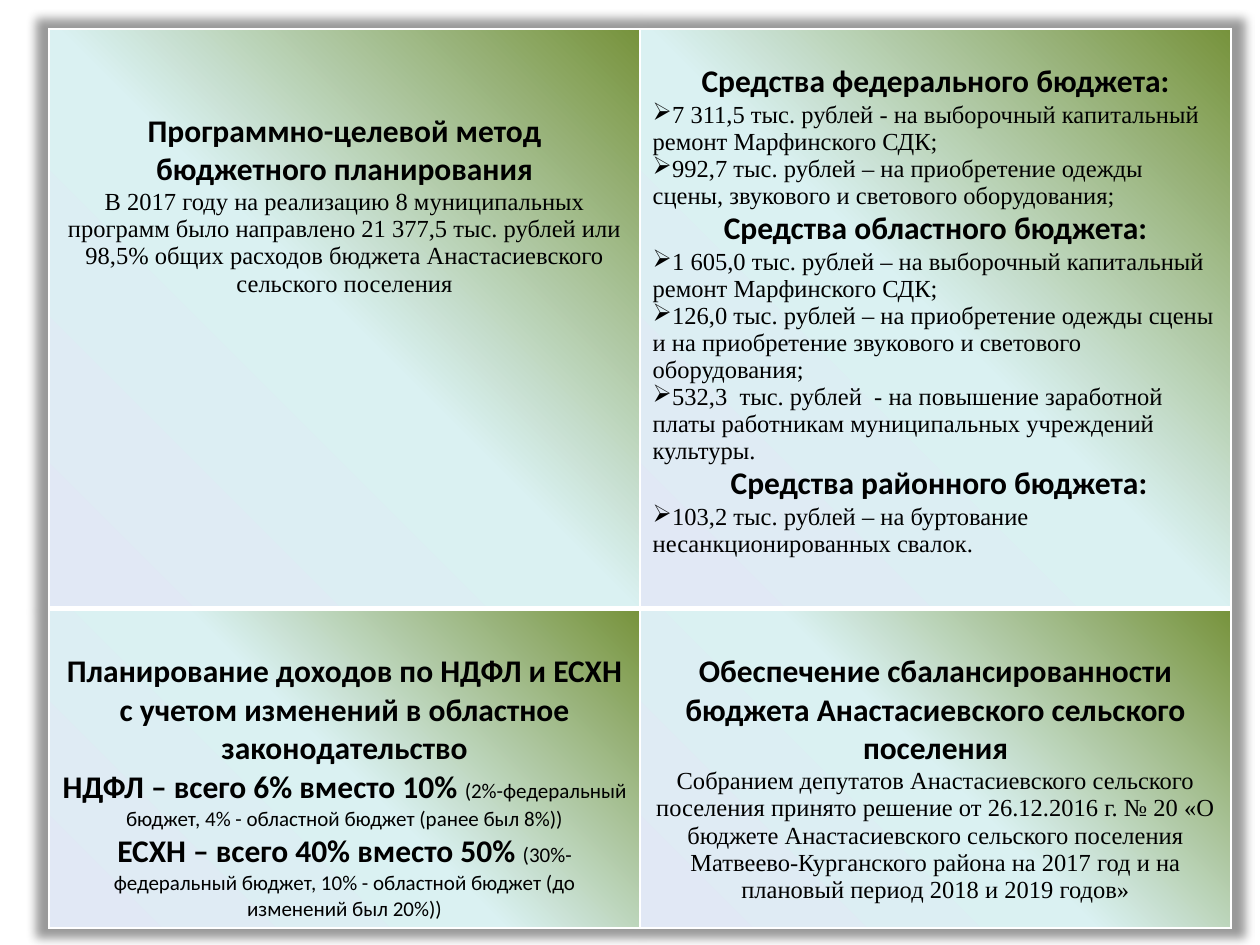
"""Build a slide with a two-by-two table of budget results."""
from lxml.etree import SubElement
from pptx import Presentation
from pptx.dml.color import RGBColor
from pptx.enum.text import PP_ALIGN
from pptx.oxml import parse_xml
from pptx.oxml.ns import nsdecls, qn
from pptx.util import Inches, Pt

BLACK = RGBColor(0, 0, 0)
WHITE = RGBColor(0xFF, 0xFF, 0xFF)
GREEN = RGBColor(0x77, 0x93, 0x3C)
AQUA = RGBColor(0xDA, 0xF1, 0xF2)
LAVENDER = RGBColor(0xE1, 0xE8, 0xF5)
GRADIENT = [(0, GREEN), (50, AQUA), (100, LAVENDER)]

STYLES = {
    "heading": ("Calibri", 18, True),
    "body": ("Times New Roman", 14, False),
    "bullet": ("Times New Roman", 14, False),
    "note": ("Calibri", 12, False),
}

METHOD = [
    [("heading", "Программно-целевой метод бюджетного планирования")],
    [("body", "В 2017 году на реализацию 8 муниципальных программ было направлено 21 377,5 тыс. рублей "
              "или 98,5% общих расходов бюджета Анастасиевского сельского поселения")],
]
FUNDS = [
    [("heading", "Средства федерального бюджета:")],
    [("bullet", "7 311,5 тыс. рублей - на выборочный капитальный ремонт Марфинского СДК;")],
    [("bullet", "992,7 тыс. рублей – на приобретение одежды сцены, звукового и светового оборудования;")],
    [("heading", "Средства областного бюджета:")],
    [("bullet", "1 605,0 тыс. рублей – на выборочный капитальный ремонт Марфинского СДК;")],
    [("bullet", "126,0 тыс. рублей – на приобретение одежды сцены и на приобретение звукового "
                "и светового оборудования;")],
    [("bullet", "532,3  тыс. рублей  - на повышение заработной платы работникам муниципальных "
                "учреждений культуры.")],
    [("heading", " Средства районного бюджета:")],
    [("bullet", "103,2 тыс. рублей – на буртование несанкционированных свалок.")],
]
INCOME = [
    [("heading", "Планирование доходов по НДФЛ и ЕСХН с учетом изменений в областное законодательство")],
    [("heading", "НДФЛ – всего 6% вместо 10% "),
     ("note", "(2%-федеральный бюджет, 4% - областной бюджет (ранее был 8%))")],
    [("heading", "ЕСХН – всего 40% вместо 50% "),
     ("note", "(30%-федеральный бюджет, 10% - областной бюджет (до изменений был 20%))")],
]
BALANCE = [
    [("heading", "Обеспечение сбалансированности бюджета Анастасиевского сельского поселения")],
    [("body", "Собранием депутатов Анастасиевского сельского поселения принято решение от 26.12.2016 г. "
              "№ 20 «О бюджете Анастасиевского сельского поселения Матвеево-Курганского района "
              "на 2017 год и на плановый период 2018 и 2019 годов»")],
]
ROWS = [
    {"height": 4.6, "bottom_line": 3, "cells": [(METHOD, 0.66), (FUNDS, 0.27)]},
    {"height": 2.48, "bottom_line": 1, "cells": [(INCOME, 0.35), (BALANCE, 0.35)]},
]
COLUMN_WIDTH = 4.69


def apply_style(font, style):
    font.name, size, font.bold = STYLES[style]
    font.size = Pt(size)
    font.color.rgb = BLACK


def write_paragraph(paragraph, runs):
    styles = [style for style, _ in runs]
    for style, text in runs:
        run = paragraph.add_run()
        run.text = text
        if len(runs) > 1:
            apply_style(run.font, style)
    if len(runs) == 1:
        apply_style(paragraph.font, styles[0])
    if styles[0] == "bullet":
        paragraph.alignment = PP_ALIGN.LEFT
        properties = paragraph.font._element.getparent()
        properties.set("marL", "0")
        properties.set("indent", "0")
        bullet = parse_xml(f'<a:buChar {nsdecls("a")} char="➢"/>')
        properties.insert(0, bullet)
    else:
        paragraph.alignment = PP_ALIGN.CENTER


def decorate_cell(cell, bottom_line):
    properties = cell._tc.get_or_add_tcPr()
    for side, width in zip("LRTB", (1, 1, 1, bottom_line)):
        line = SubElement(properties, qn(f"a:ln{side}"), w=str(Pt(width)))
        fill = SubElement(line, qn("a:solidFill"))
        SubElement(fill, qn("a:srgbClr"), val=str(WHITE))
    stops = "".join(
        f'<a:gs pos="{position * 1000}"><a:srgbClr val="{color}"/></a:gs>'
        for position, color in GRADIENT
    )
    properties.append(parse_xml(
        f'<a:gradFill {nsdecls("a")} rotWithShape="1"><a:gsLst>{stops}</a:gsLst>'
        '<a:path path="circle"><a:fillToRect l="100000" b="100000"/></a:path></a:gradFill>'
    ))


def add_table_shadow(table):
    table._tbl.tblPr.insert(0, parse_xml(
        f'<a:effectLst {nsdecls("a")}><a:outerShdw blurRad="63500" sx="102000" sy="102000" '
        'algn="ctr" rotWithShape="0"><a:srgbClr val="000000"><a:alpha val="40000"/>'
        '</a:srgbClr></a:outerShdw></a:effectLst>'
    ))


def main():
    presentation = Presentation()
    presentation.slide_width, presentation.slide_height = Inches(10), Inches(7.5)
    slide = presentation.slides.add_slide(presentation.slide_layouts[6])
    height = sum(row["height"] for row in ROWS)
    table = slide.shapes.add_table(
        len(ROWS), 2, Inches(0.39), Inches(0.23), Inches(2 * COLUMN_WIDTH), Inches(height)
    ).table
    table.first_row = table.horz_banding = False
    add_table_shadow(table)
    for row_index, row in enumerate(ROWS):
        table.rows[row_index].height = Inches(row["height"])
        for column_index, (paragraphs, top_margin) in enumerate(row["cells"]):
            cell = table.cell(row_index, column_index)
            cell.margin_top = Inches(top_margin)
            decorate_cell(cell, row["bottom_line"])
            frame = cell.text_frame
            for index, runs in enumerate(paragraphs):
                paragraph = frame.add_paragraph() if index else frame.paragraphs[0]
                write_paragraph(paragraph, runs)
    presentation.save("out.pptx")


if __name__ == "__main__":
    main()
